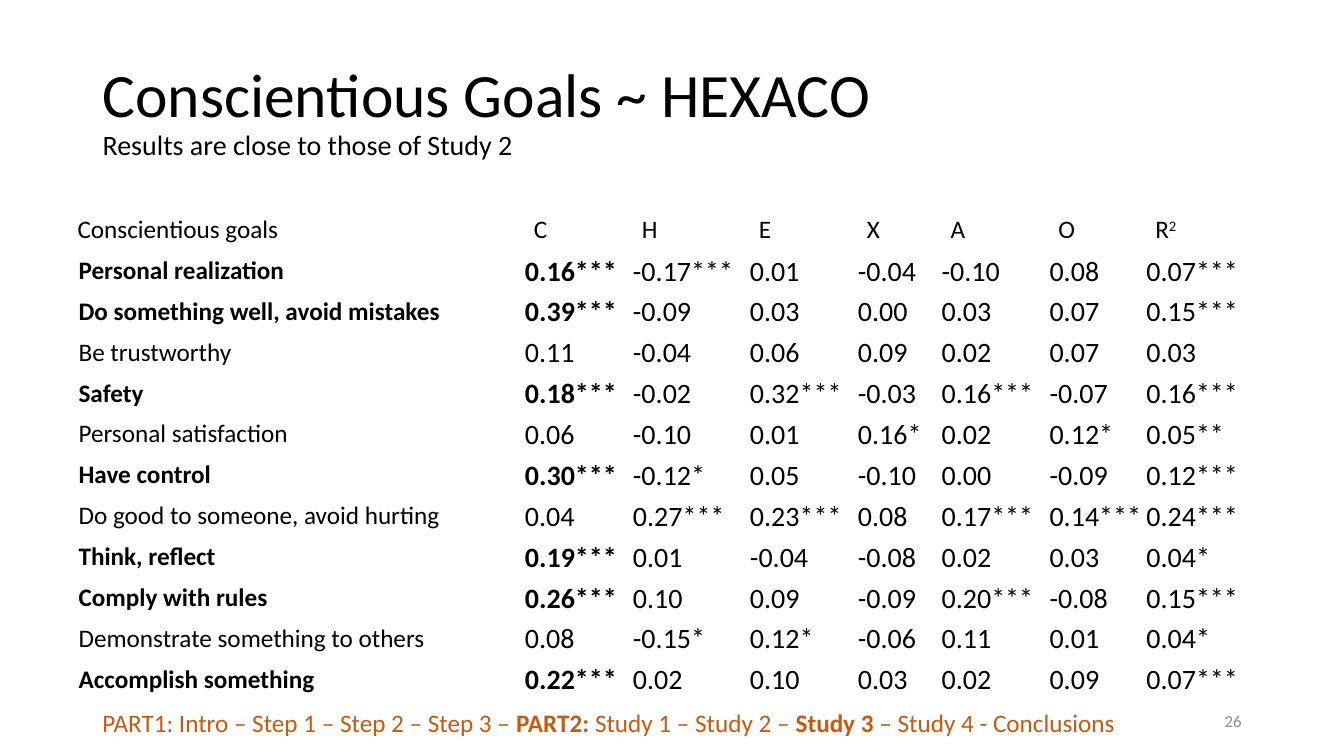
import pptx
import pptx.util
import pptx.dml.color
import pptx.enum.text
from pptx.util import Cm

COLORS = {"text": "000000", "number": "8C8C8C", "progress": "C55A11"}
ANCHOR = pptx.enum.text.MSO_ANCHOR
ALIGN = pptx.enum.text.PP_ALIGN


def add_run(p, text, size=18, bold=False, color="text", baseline=None):
    r = p.add_run()
    r.text = text
    r.font.name = "Calibri"
    r.font.size = pptx.util.Pt(size)
    r.font.bold = bold
    r.font.color.rgb = pptx.dml.color.RGBColor.from_string(COLORS[color])
    if baseline:
        r._r.get_or_add_rPr().set("baseline", str(baseline))


prs = pptx.Presentation()
prs.slide_width = Cm(33.87)
prs.slide_height = Cm(19.05)
s = prs.slides.add_slide(prs.slide_layouts[5])

title = s.shapes.title
title.left, title.top, title.width, title.height = Cm(2.33), Cm(1.01), Cm(29.21), Cm(3.68)
tf = title.text_frame
tf.word_wrap = True
tf.auto_size = pptx.enum.text.MSO_AUTO_SIZE.NONE
tf.vertical_anchor = ANCHOR.MIDDLE
p = tf.paragraphs[0]
p.alignment = ALIGN.LEFT
p.line_spacing = 0.9
add_run(p, "Conscientious Goals ~ HEXACO", size=44)
p.add_line_break()
add_run(p, "Results are close to those of Study 2", size=20)

number = s.shapes.add_textbox(Cm(23.92), Cm(17.66), Cm(7.62), Cm(1.01))
tf = number.text_frame
tf.word_wrap = True
tf.vertical_anchor = ANCHOR.MIDDLE
p = tf.paragraphs[0]
p.alignment = ALIGN.RIGHT
add_run(p, "26", size=12, color="number")

header = ["Conscientious goals", "C", "H", "E", "X", "A", "O", "R"]
goals = [
    ["Personal realization", "0.16***", "-0.17***", "0.01", "-0.04", "-0.10", "0.08", "0.07***"],
    ["Do something well, avoid mistakes", "0.39***", "-0.09", "0.03", "0.00", "0.03", "0.07", "0.15***"],
    ["Be trustworthy", "0.11", "-0.04", "0.06", "0.09", "0.02", "0.07", "0.03"],
    ["Safety", "0.18***", "-0.02", "0.32***", "-0.03", "0.16***", "-0.07", "0.16***"],
    ["Personal satisfaction", "0.06", "-0.10", "0.01", "0.16*", "0.02", "0.12*", "0.05**"],
    ["Have control", "0.30***", "-0.12*", "0.05", "-0.10", "0.00", "-0.09", "0.12***"],
    ["Do good to someone, avoid hurting", "0.04", "0.27***", "0.23***", "0.08", "0.17***", "0.14***", "0.24***"],
    ["Think, reflect", "0.19***", "0.01", "-0.04", "-0.08", "0.02", "0.03", "0.04*"],
    ["Comply with rules", "0.26***", "0.10", "0.09", "-0.09", "0.20***", "-0.08", "0.15***"],
    ["Demonstrate something to others", "0.08", "-0.15*", "0.12*", "-0.06", "0.11", "0.01", "0.04*"],
    ["Accomplish something", "0.22***", "0.02", "0.10", "0.03", "0.02", "0.09", "0.07***"],
]
rows = [header] + goals
widths = [11.5, 2.72, 2.95, 2.72, 2.11, 2.72, 2.44, 2.74]

table = s.shapes.add_table(len(rows), len(widths), Cm(1.7), Cm(5.28), Cm(sum(widths)), Cm(12.36)).table
table.first_row = False
table.horz_banding = False
for column, width in zip(table.columns, widths):
    column.width = Cm(width)

for i, values in enumerate(rows):
    table.rows[i].height = Cm(1.03)
    significant = values[1].endswith("***")
    for j, value in enumerate(values):
        cell = table.cell(i, j)
        cell.fill.background()
        is_value = i > 0 and j > 0
        if is_value:
            cell.vertical_anchor = ANCHOR.MIDDLE
            cell.margin_left = cell.margin_right = cell.margin_top = Cm(0.03)
            cell.margin_bottom = 0
        elif i > 0:
            cell.margin_left = cell.margin_right = Cm(0.28)
        p = cell.text_frame.paragraphs[0]
        add_run(p, value, size=20 if is_value else 18, bold=significant and j < 2)
        if value == "R":
            add_run(p, "2", baseline=30000)

progress = s.shapes.add_textbox(Cm(2.33), Cm(17.7), Cm(29.9), Cm(1.03))
tf = progress.text_frame
tf.word_wrap = True
tf.auto_size = pptx.enum.text.MSO_AUTO_SIZE.SHAPE_TO_FIT_TEXT
for text, bold in [
    ("PART1: Intro – Step 1 – Step 2 – Step 3 – ", False),
    ("PART2: ", True),
    ("Study 1 – Study 2 – ", False),
    ("Study 3", True),
    (" – Study 4 - Conclusions", False),
]:
    add_run(tf.paragraphs[0], text, bold=bold, color="progress")

prs.save("out.pptx")
